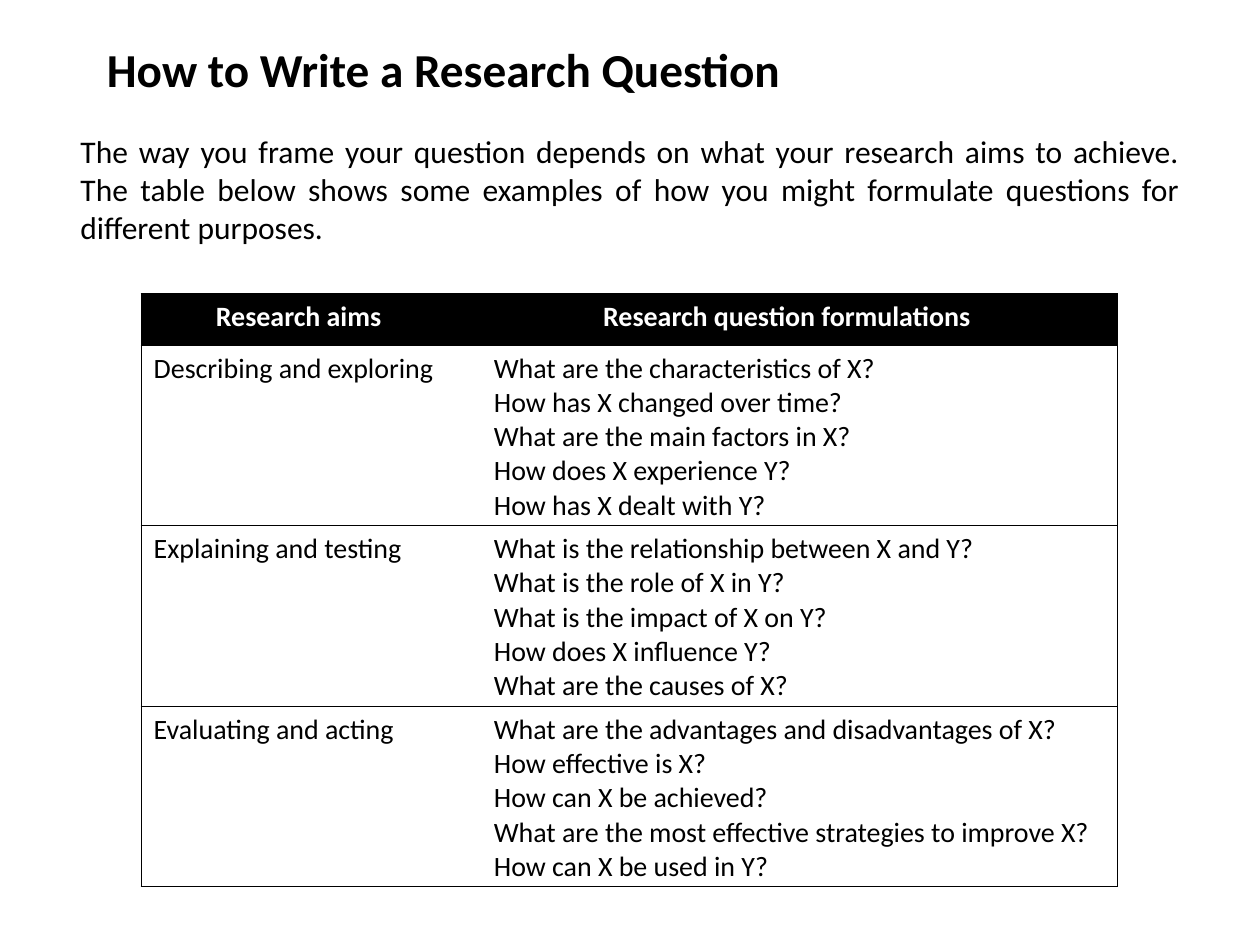
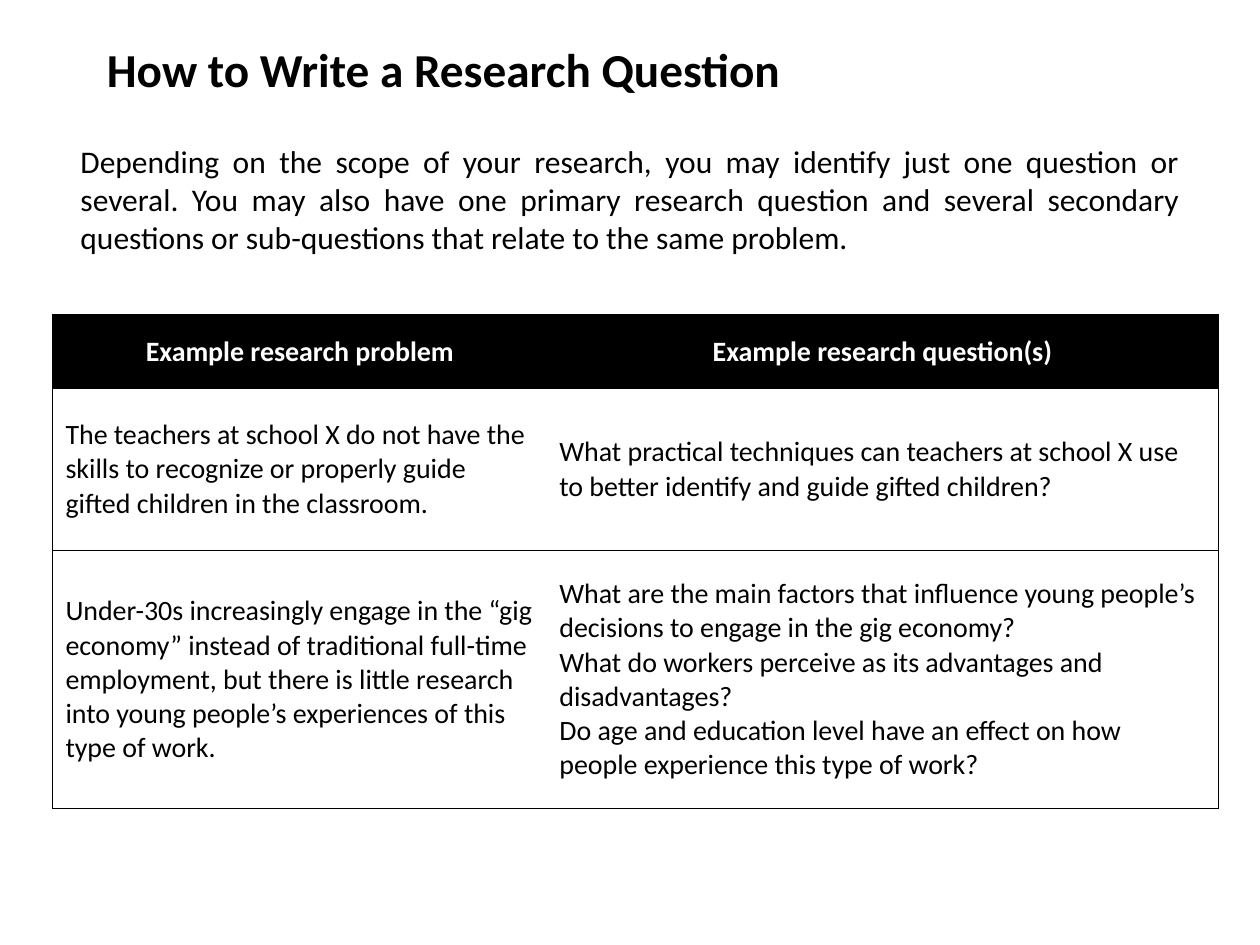
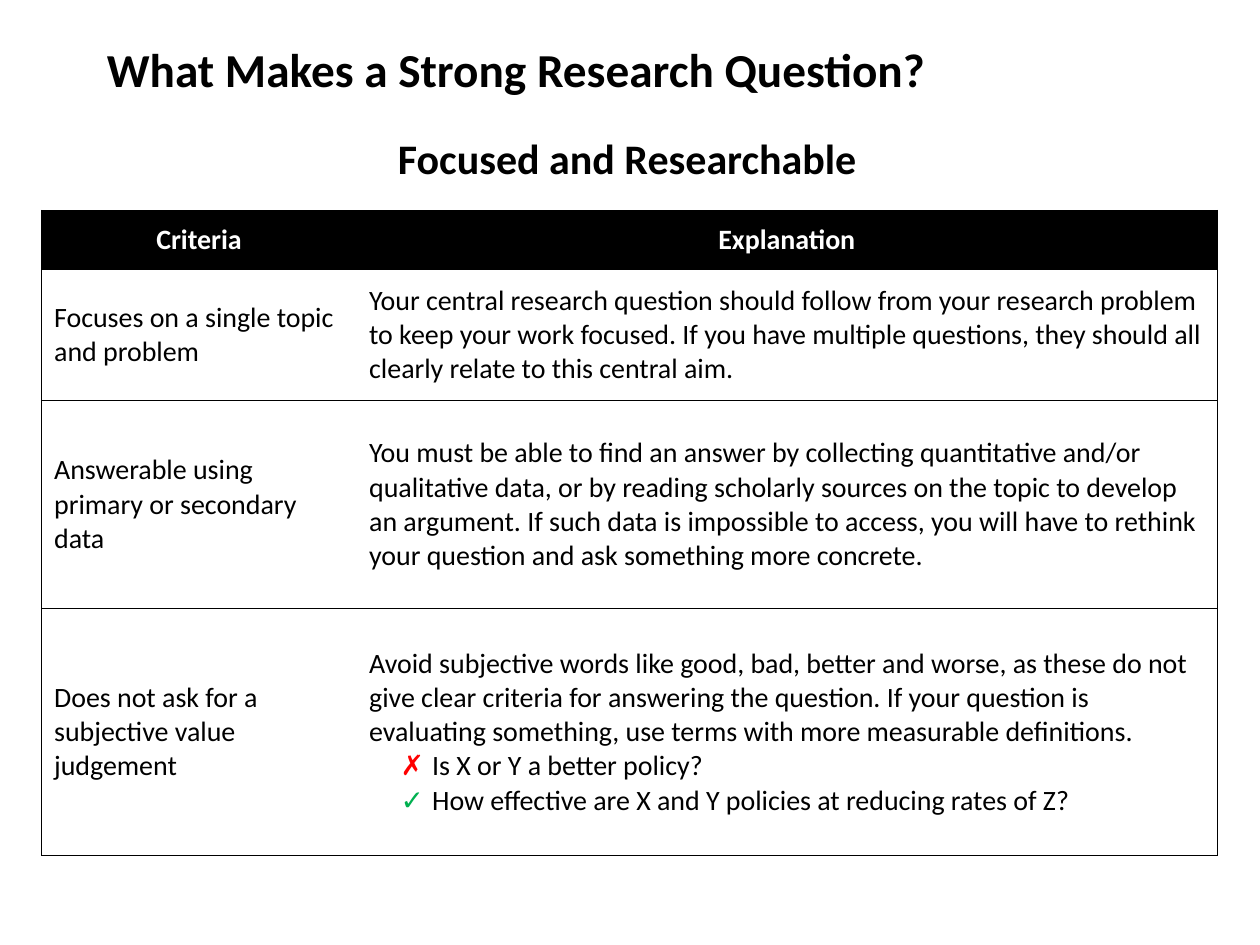
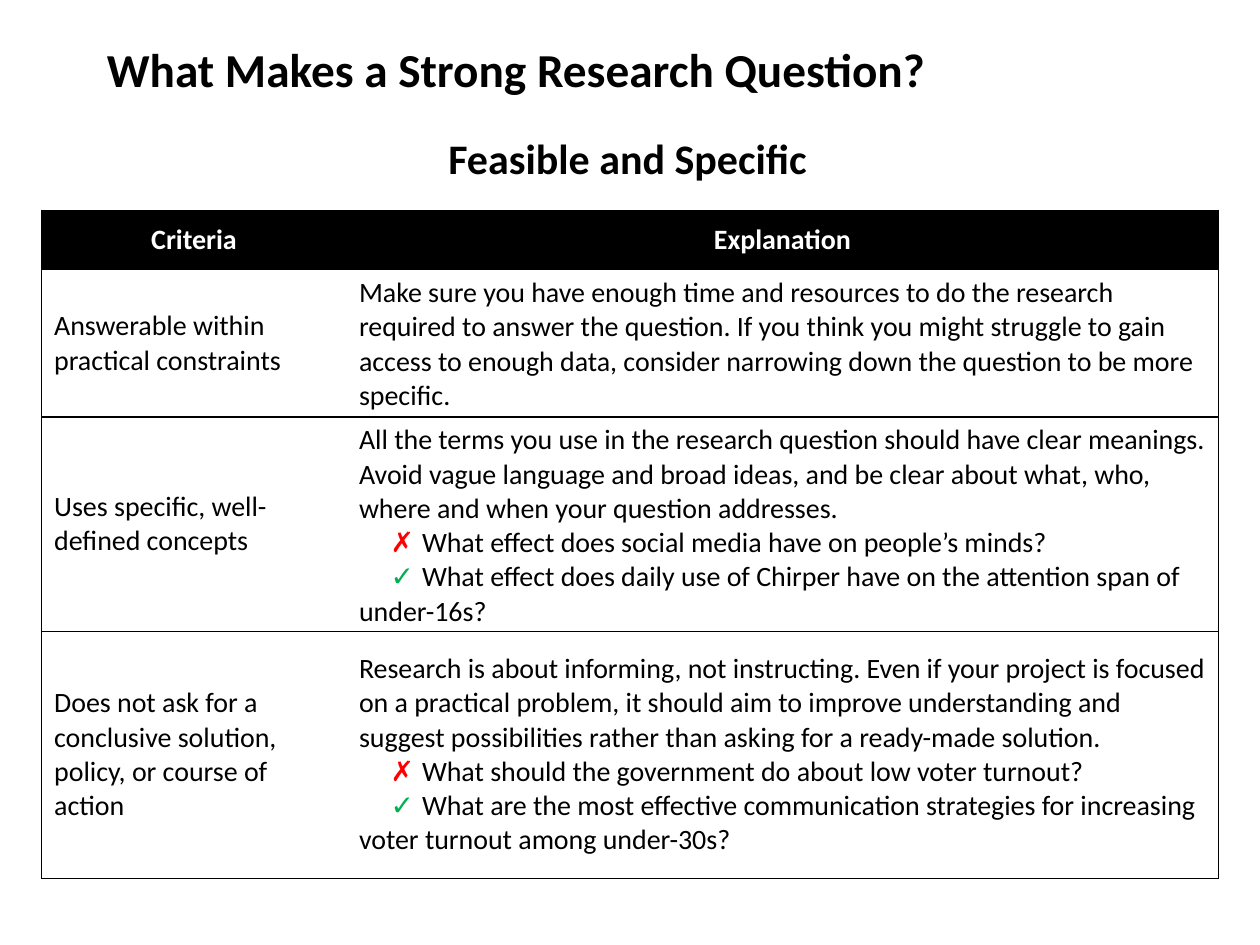
"""Build four slides on writing a strong research question."""
import pptx
import pptx.dml.color
import pptx.enum.text
import pptx.oxml.ns
import pptx.util
import lxml.etree

Inches = pptx.util.Inches
Pt = pptx.util.Pt
Align = pptx.enum.text.PP_ALIGN
Anchor = pptx.enum.text.MSO_ANCHOR
qn = pptx.oxml.ns.qn

FONT = "Calibri"
BLACK, WHITE, RED, GREEN = "000000", "FFFFFF", "FF0000", "00B050"
SLIDE_WIDTH, SLIDE_HEIGHT = 10, 7.5
TITLE_BOX = (0.75, 0.27, 7.25, 0.56)
MARK_INDENT = 0.25
BAD, GOOD = "✗", "✓"
MARKS = {BAD: (RED, 0.58), GOOD: (GREEN, 0.53)}

HOW_TO = "How to Write a Research Question"
STRONG = "What Makes a Strong Research Question?"

AIMS = [
    ("Research aims", ["Research question formulations"]),
    ("Describing and exploring", [
        "What are the characteristics of X?",
        "How has X changed over time?",
        "What are the main factors in X?",
        "How does X experience Y?",
        "How has X dealt with Y?"]),
    ("Explaining and testing", [
        "What is the relationship between X and Y?",
        "What is the role of X in Y?",
        "What is the impact of X on Y?",
        "How does X influence Y?",
        "What are the causes of X?"]),
    ("Evaluating and acting", [
        "What are the advantages and disadvantages of X?",
        "How effective is X?",
        "How can X be achieved?",
        "What are the most effective strategies to improve X?",
        "How can X be used in Y?"]),
]

PROBLEMS = [
    ("Example research problem", ["Example research question(s)"]),
    ("The teachers at school X do not have the skills to recognize or properly "
     "guide gifted children in the classroom.", [
         "What practical techniques can teachers at school X use to better "
         "identify and guide gifted children?"]),
    ("Under-30s increasingly engage in the “gig economy” instead of traditional "
     "full-time employment, but there is little research into young people’s "
     "experiences of this type of work.", [
         "What are the main factors that influence young people’s decisions to "
         "engage in the gig economy?",
         "What do workers perceive as its advantages and disadvantages?",
         "Do age and education level have an effect on how people experience "
         "this type of work?"]),
]

FOCUSED = [
    ("Criteria", ["Explanation"]),
    ("Focuses on a single topic and problem", [
        "Your central research question should follow from your research problem "
        "to keep your work focused. If you have multiple questions, they should "
        "all clearly relate to this central aim."]),
    ("Answerable using primary or secondary data", [
        "You must be able to find an answer by collecting quantitative and/or "
        "qualitative data, or by reading scholarly sources on the topic to "
        "develop an argument. If such data is impossible to access, you will "
        "have to rethink your question and ask something more concrete."]),
    ("Does not ask for a subjective value judgement", [
        "Avoid subjective words like good, bad, better and worse, as these do "
        "not give clear criteria for answering the question. If your question "
        "is evaluating something, use terms with more measurable definitions.",
        (BAD, "Is X or Y a better policy?"),
        (GOOD, "How effective are X and Y policies at reducing rates of Z?")]),
]

FEASIBLE = [
    ("Criteria", ["Explanation"]),
    ("Answerable within practical constraints", [
        "Make sure you have enough time and resources to do the research "
        "required to answer the question. If you think you might struggle to "
        "gain access to enough data, consider narrowing down the question to be "
        "more specific."]),
    ("Uses specific, well-defined concepts", [
        "All the terms you use in the research question should have clear "
        "meanings. Avoid vague language and broad ideas, and be clear about "
        "what, who, where and when your question addresses.",
        (BAD, "What effect does social media have on people’s minds?"),
        (GOOD, "What effect does daily use of Chirper have on the attention "
               "span of under-16s?")]),
    ("Does not ask for a conclusive solution, policy, or course of action", [
        "Research is about informing, not instructing. Even if your project is "
        "focused on a practical problem, it should aim to improve understanding "
        "and suggest possibilities rather than asking for a ready-made solution.",
        (BAD, "What should the government do about low voter turnout?"),
        (GOOD, "What are the most effective communication strategies for "
               "increasing voter turnout among under-30s?")]),
]


def rgb(value):
    """Return the colour for a hex string."""
    return pptx.dml.color.RGBColor.from_string(value)


def add_run(paragraph, text, size, color=BLACK, bold=False):
    """Add one formatted run to a paragraph."""
    run = paragraph.add_run()
    run.text = text
    run.font.name = FONT
    run.font.size = Pt(size)
    run.font.bold = bold
    run.font.color.rgb = rgb(color)


def add_text(slide, box, text, size, bold=False, align=Align.LEFT, wrap=True, after=0):
    """Add a one-paragraph text box that grows with its text."""
    frame = slide.shapes.add_textbox(*map(Inches, box)).text_frame
    frame.word_wrap = wrap
    frame.auto_size = pptx.enum.text.MSO_AUTO_SIZE.SHAPE_TO_FIT_TEXT
    paragraph = frame.paragraphs[0]
    paragraph.alignment = align
    paragraph.space_after = Pt(after)
    add_run(paragraph, text, size, bold=bold)


def add_titled_slide(deck, title):
    """Add a blank slide with the shared title."""
    slide = deck.slides.add_slide(deck.slide_layouts[6])
    add_text(slide, TITLE_BOX, title, 27, bold=True)
    return slide


def add_intro(slide, box, text):
    """Add the justified introduction above a table."""
    add_text(slide, box, text, 18, align=Align.JUSTIFY, after=36)


def add_subtitle(slide, top, width, text):
    """Add a heading centred on the slide."""
    box = ((SLIDE_WIDTH - width) / 2, top, width, 0.5)
    add_text(slide, box, text, 24, bold=True, wrap=False)


def set_borders(cell, visible):
    """Draw thin black borders on the named sides and clear the others."""
    properties = cell._tc.get_or_add_tcPr()
    for side in "LRTB":
        line = lxml.etree.SubElement(properties, qn(f"a:ln{side}"), w=str(Pt(0.75)))
        if side in visible:
            fill = lxml.etree.SubElement(line, qn("a:solidFill"))
            lxml.etree.SubElement(fill, qn("a:srgbClr"), val=BLACK)
        else:
            lxml.etree.SubElement(line, qn("a:noFill"))


def add_marked_example(paragraph, mark, text):
    """Write an example question after its coloured mark."""
    color, text_start = MARKS[mark]
    properties = paragraph._p.get_or_add_pPr()
    properties.set("marL", "0")
    properties.set("indent", str(Inches(MARK_INDENT)))
    stops = lxml.etree.SubElement(properties, qn("a:tabLst"))
    lxml.etree.SubElement(stops, qn("a:tab"), pos=str(Inches(text_start)), algn="l")
    add_run(paragraph, mark + "\t", 16, color)
    add_run(paragraph, text, 16)


def fill_cell(cell, lines, header, anchor, indent):
    """Write the paragraphs of one cell and set its fill."""
    cell.vertical_anchor = anchor
    if header:
        cell.fill.solid()
        cell.fill.fore_color.rgb = rgb(BLACK)
    else:
        cell.fill.background()
    frame = cell.text_frame
    for number, line in enumerate(lines):
        paragraph = frame.add_paragraph() if number else frame.paragraphs[0]
        if isinstance(line, tuple):
            add_marked_example(paragraph, *line)
            continue
        if header:
            paragraph.alignment = Align.CENTER
        elif indent:
            properties = paragraph._p.get_or_add_pPr()
            properties.set("marL", str(Inches(indent)))
            properties.set("indent", "0")
        add_run(paragraph, line, 16, WHITE if header else BLACK, header)


def add_question_table(slide, left, top, widths, heights, rows, anchor=Anchor.MIDDLE, indent=0):
    """Add a two-column table with a black header and ruled rows."""
    box = (left, top, sum(widths), sum(heights))
    table = slide.shapes.add_table(len(rows), 2, *map(Inches, box)).table
    table.horz_banding = False
    for column, width in zip(table.columns, widths):
        column.width = Inches(width)
    for index, (topic, details) in enumerate(rows):
        table.rows[index].height = Inches(heights[index])
        topic_cell, detail_cell = table.cell(index, 0), table.cell(index, 1)
        set_borders(topic_cell, "LTB")
        set_borders(detail_cell, "RTB")
        fill_cell(topic_cell, [topic], index == 0, anchor, 0)
        fill_cell(detail_cell, details, index == 0, anchor, indent)


def build_aims(deck):
    """Build the slide on aims and formulations."""
    slide = add_titled_slide(deck, HOW_TO)
    add_intro(slide, (0.54, 1, 8.92, 1.01),
              "The way you frame your question depends on what your research aims "
              "to achieve. The table below shows some examples of how you might "
              "formulate questions for different purposes.")
    add_question_table(slide, 1.12, 2.33, (2.5, 5.25), (0.41, 1.43, 1.43, 1.43),
                       AIMS, Anchor.TOP, indent=0.2)


def build_problems(deck):
    """Build the slide on problems and their questions."""
    slide = add_titled_slide(deck, HOW_TO)
    add_intro(slide, (0.54, 1.08, 8.92, 1.01),
              "Depending on the scope of your research, you may identify just one "
              "question or several. You may also have one primary research question "
              "and several secondary questions or sub-questions that relate to the "
              "same problem.")
    add_question_table(slide, 0.42, 2.5, (3.92, 5.33), (0.58, 1.29, 2.05), PROBLEMS)


def build_criteria(deck, subtitle, subtitle_width, widths, heights, rows):
    """Build a slide of criteria under a centred subtitle."""
    slide = add_titled_slide(deck, STRONG)
    add_question_table(slide, 0.33, 1.67, widths, heights, rows)
    add_subtitle(slide, 1, subtitle_width, subtitle)


def main():
    """Build and save the deck."""
    deck = pptx.Presentation()
    deck.slide_width, deck.slide_height = Inches(SLIDE_WIDTH), Inches(SLIDE_HEIGHT)
    build_aims(deck)
    build_problems(deck)
    build_criteria(deck, "Focused and Researchable", 3.88,
                   (2.5, 6.83), (0.47, 1.04, 1.65, 1.96), FOCUSED)
    build_criteria(deck, "Feasible and Specific", 3.08,
                   (2.42, 6.92), (0.47, 1.17, 1.7, 1.96), FEASIBLE)
    deck.save("out.pptx")


if __name__ == "__main__":
    main()
